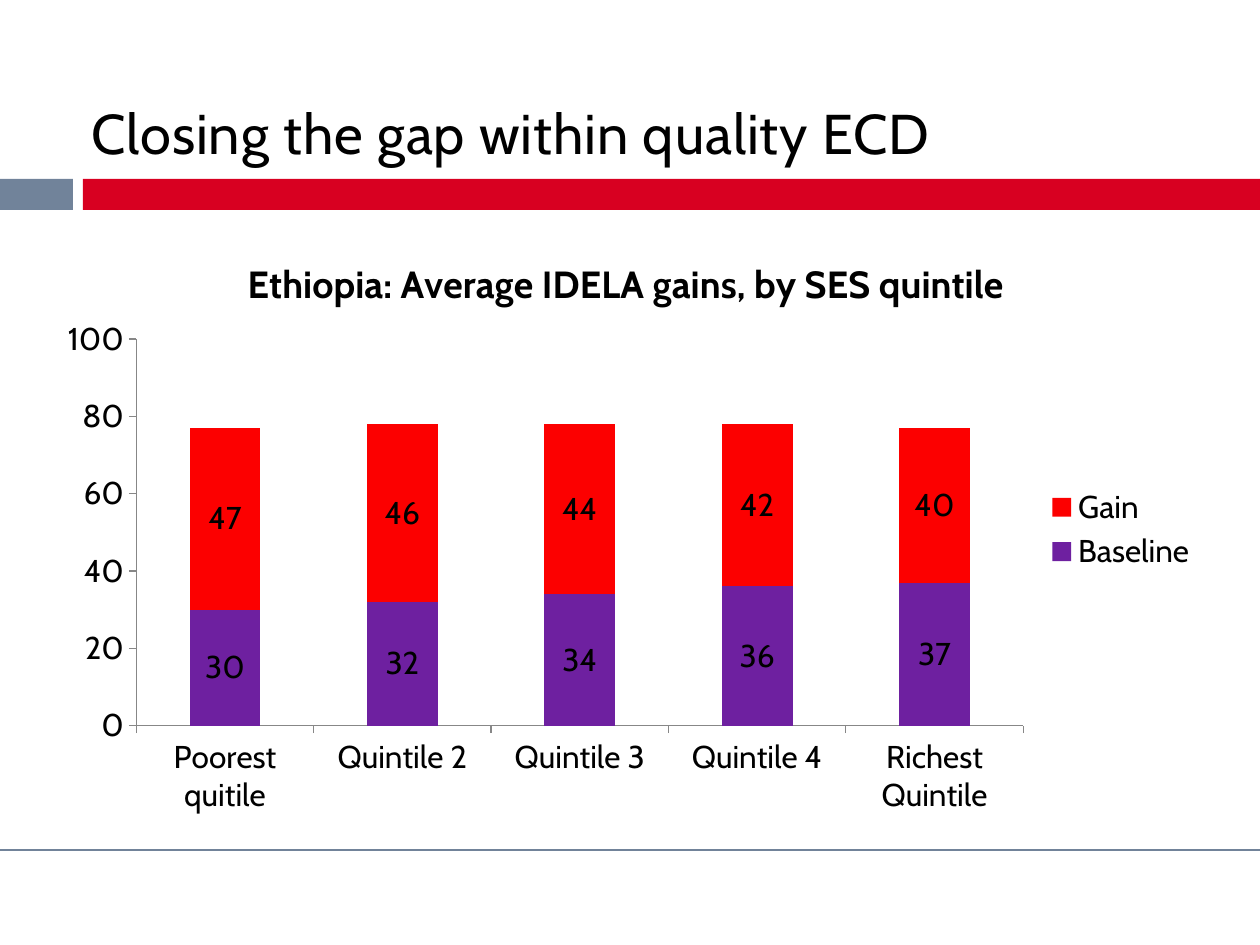
from lxml import etree
from pptx import Presentation
from pptx import util as u
from pptx.chart.data import CategoryChartData
from pptx.dml.color import RGBColor
from pptx.enum import chart as ch, shapes, text
from pptx.oxml import parse_xml
from pptx.oxml.ns import nsdecls, qn

SCALE = 914400 / 126
FONT = "Cabin"
HUES = {
    "ink": "000000", "slate": "71839A", "red": "D80021", "rule": "718399",
    "axis": "878787", "base": "6E20A0", "gain": "FC0000",
}
CATS = ["Poorest quitile", "Quintile 2", "Quintile 3", "Quintile 4", "Richest Quintile"]
ROWS = [
    ("Baseline", [30, 32, 34, 36, 37], "base"),
    ("Gain", [47, 46, 44, 42, 40], "gain"),
]


def px(n):
    return u.Emu(round(n * SCALE))


def hue(name):
    return RGBColor.from_string(HUES[name])


def style(font, size, bold=False):
    font.name = FONT
    font.size = u.Pt(size)
    font.bold = bold
    font.color.rgb = hue("ink")


def write(frame, words, size, bold=False, track=0):
    run = frame.paragraphs[0].add_run()
    run.text = words
    style(run.font, size, bold)
    if track:
        run._r.get_or_add_rPr().set("spc", str(track))


def bar(slide, box, fill):
    shape = slide.shapes.add_shape(shapes.MSO_SHAPE.RECTANGLE, *map(px, box))
    shape.shadow.inherit = False
    shape.fill.solid()
    shape.fill.fore_color.rgb = hue(fill)
    shape.line.fill.background()


def rule(slide, start, end, color):
    line = slide.shapes.add_connector(
        shapes.MSO_CONNECTOR.STRAIGHT, *map(px, start + end))
    line.line.color.rgb = hue(color)
    line.line.width = u.Pt(1)
    etree.SubElement(line._element.spPr, qn("a:effectLst"))


def title(slide, box, words):
    frame = slide.shapes.add_textbox(*map(px, box)).text_frame
    frame.word_wrap = True
    frame.vertical_anchor = text.MSO_ANCHOR.BOTTOM
    write(frame, words, 32, track=50)


def place(chart, x, y, w, h):
    area = chart._chartSpace.chart.plotArea
    for old in area.findall(qn("c:layout")):
        area.remove(old)
    area.insert(0, parse_xml(
        f'<c:layout {nsdecls("c")}><c:manualLayout><c:layoutTarget val="inner"/>'
        f'<c:xMode val="edge"/><c:yMode val="edge"/><c:x val="{x}"/><c:y val="{y}"/>'
        f'<c:w val="{w}"/><c:h val="{h}"/></c:manualLayout></c:layout>'))


def axes(chart):
    for axis in (chart.category_axis, chart.value_axis):
        axis.has_major_gridlines = False
        axis.major_tick_mark = ch.XL_TICK_MARK.OUTSIDE
        axis.minor_tick_mark = ch.XL_TICK_MARK.NONE
        axis.format.line.color.rgb = hue("axis")
        axis.format.line.width = u.Pt(0.75)
    scale = chart.value_axis
    scale.minimum_scale, scale.maximum_scale, scale.major_unit = 0, 100, 20


def stack(slide, box, words):
    data = CategoryChartData(number_format="General")
    data.categories = CATS
    for name, vals, _ in ROWS:
        data.add_series(name, vals)
    chart = slide.shapes.add_chart(
        ch.XL_CHART_TYPE.COLUMN_STACKED, *map(px, box), data).chart
    style(chart.font, 18)
    chart.has_title = True
    write(chart.chart_title.text_frame, words, 21.6, bold=True)
    chart.chart_title.include_in_layout = False
    chart.has_legend = True
    chart.legend.position = ch.XL_LEGEND_POSITION.RIGHT
    chart.legend.include_in_layout = False
    axes(chart)
    plot = chart.plots[0]
    plot.gap_width, plot.overlap = 150, 100
    plot.vary_by_categories = False
    for series, (_, _, color) in zip(plot.series, ROWS):
        series.format.fill.solid()
        series.format.fill.fore_color.rgb = hue(color)
        series.data_labels.show_value = True
        style(series.data_labels.font, 18)
    place(chart, 0.08, 0.18, 0.76, 0.65)


def main():
    deck = Presentation()
    deck.slide_width, deck.slide_height = px(1260), px(945)
    slide = deck.slides.add_slide(deck.slide_layouts[6])
    bar(slide, (0, 179, 73, 31), "slate")
    bar(slide, (83, 179, 1178, 31), "red")
    rule(slide, (0, 850), (1260, 850), "rule")
    title(slide, (79, 55, 1159, 117), "Closing the gap within quality ECD")
    stack(slide, (43, 232, 1167, 595), "Ethiopia: Average IDELA gains, by SES quintile")
    deck.save("out.pptx")


if __name__ == "__main__":
    main()
